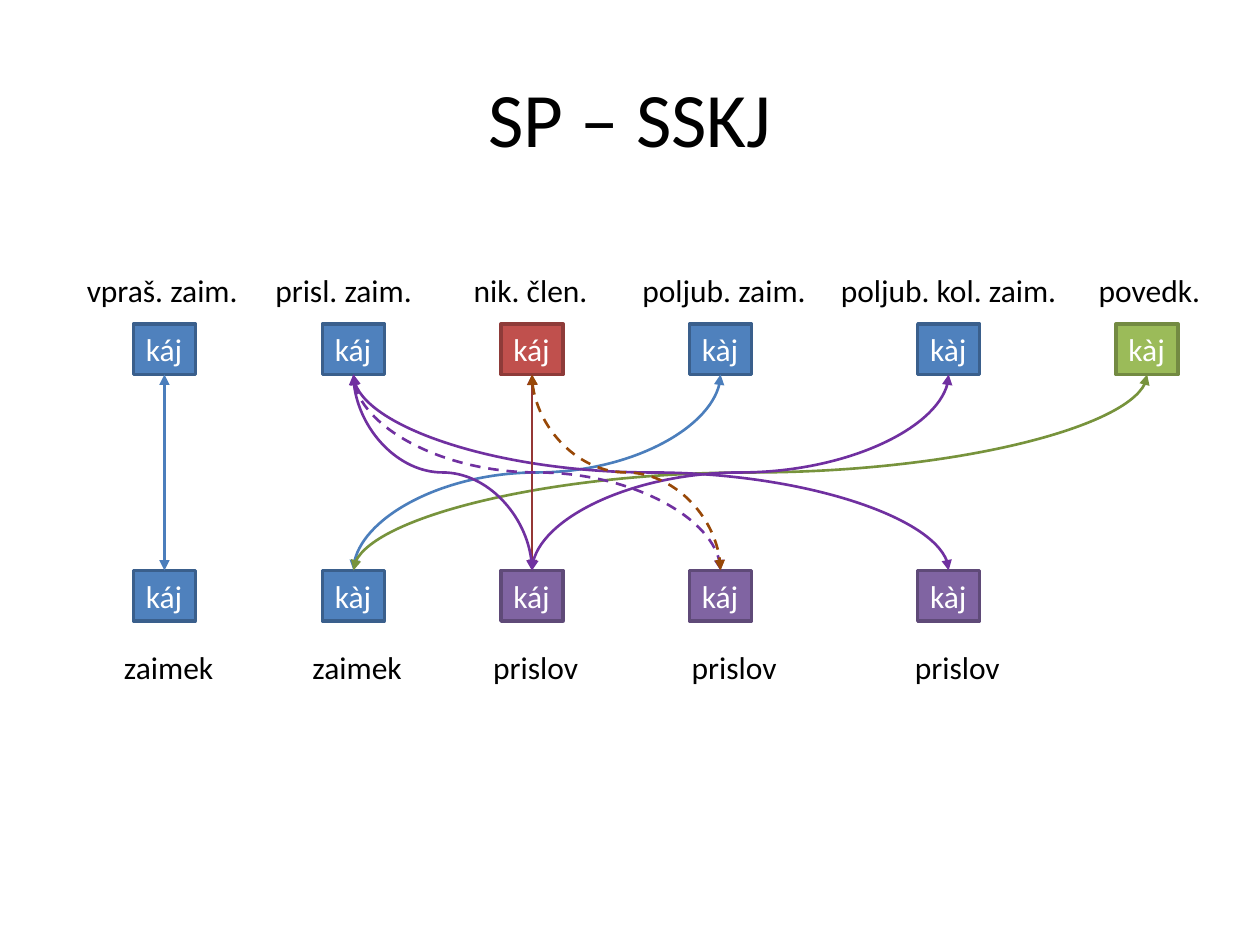
"""Build the SP – SSKJ slide linking the senses of káj and kàj in two dictionaries."""
from dataclasses import dataclass

from lxml import etree
from pptx import Presentation
from pptx.dml.color import RGBColor
from pptx.enum import dml, shapes, text
from pptx.oxml import ns
from pptx.util import Cm, Pt


@dataclass(frozen=True)
class Theme:
    font: str = "Calibri"
    title_size: int = 44
    text_size: int = 18
    black: str = "000000"
    white: str = "FFFFFF"
    blue: tuple = ("4F81BD", "3A5F8C")
    red: tuple = ("C0504D", "8E3B39")
    green: tuple = ("9BBB59", "738A42")
    purple: tuple = ("8064A2", "5F4A78")
    blue_link: str = "4B7EBC"
    green_link: str = "77933C"
    red_link: str = "953735"
    purple_link: str = "7030A0"
    brown_link: str = "984807"


theme = Theme()


def write(shape, wording, size, color, alignment):
    paragraph = shape.text_frame.paragraphs[0]
    paragraph.alignment = alignment
    run = paragraph.add_run()
    run.text = wording
    run.font.name = theme.font
    run.font.size = Pt(size)
    run.font.color.rgb = RGBColor.from_string(color)


presentation = Presentation()
presentation.slide_width, presentation.slide_height = Cm(25.4), Cm(19.05)
slide = presentation.slides.add_slide(presentation.slide_layouts[5])
left_align, center_align = text.PP_ALIGN.LEFT, text.PP_ALIGN.CENTER

title = slide.shapes.title
title.left, title.top, title.width, title.height = Cm(1.27), Cm(0.76), Cm(22.86), Cm(3.18)
title.text_frame.vertical_anchor = text.MSO_ANCHOR.MIDDLE
write(title, "SP – SSKJ", theme.title_size, theme.black, center_align)

columns = [2.69, 6.5, 10.1, 13.9, 18.5, 22.5]
sp_senses = [
    ("káj", theme.blue, "vpraš. zaim.", 1.5, 3.6),
    ("káj", theme.blue, "prisl. zaim.", 5.3, 3.6),
    ("káj", theme.red, "nik. člen.", 9.3, 3),
    ("kàj", theme.blue, "poljub. zaim.", 12.7, 4),
    ("kàj", theme.blue, "poljub. kol. zaim.", 16.7, 5),
    ("kàj", theme.green, "povedk.", 21.9, 2.6),
]
sskj_senses = [
    ("káj", theme.blue, "zaimek", 1.7, 3.4),
    ("kàj", theme.blue, "zaimek", 5.5, 3.4),
    ("káj", theme.purple, "prislov", 9.3, 3),
    ("káj", theme.purple, "prislov", 13.3, 3),
    ("kàj", theme.purple, "prislov", 17.7, 3.2),
]
rows = [
    (sp_senses, 6.53, 5.33, left_align),
    (sskj_senses, 11.5, 12.93, center_align),
]

boxes = []
for senses, box_top, label_top, alignment in rows:
    row_boxes = []
    for column, (word, (fill, outline), label, label_left, label_width) in zip(columns, senses):
        box = slide.shapes.add_shape(
            shapes.MSO_SHAPE.RECTANGLE, Cm(column), Cm(box_top), Cm(1.25), Cm(1.02))
        box.shadow.inherit = False
        box.fill.solid()
        box.fill.fore_color.rgb = RGBColor.from_string(fill)
        box.line.color.rgb = RGBColor.from_string(outline)
        box.line.width = Pt(2)
        box.text_frame.word_wrap = False
        box.text_frame.auto_size = text.MSO_AUTO_SIZE.SHAPE_TO_FIT_TEXT
        write(box, word, theme.text_size, theme.white, left_align)
        row_boxes.append(box)

        caption = slide.shapes.add_textbox(
            Cm(label_left), Cm(label_top), Cm(label_width), Cm(1.02))
        caption.text_frame.word_wrap = True
        caption.text_frame.auto_size = text.MSO_AUTO_SIZE.SHAPE_TO_FIT_TEXT
        write(caption, label, theme.text_size, theme.black, alignment)
    boxes.append(row_boxes)

sp_boxes, sskj_boxes = boxes
links = [
    (3, 1, theme.blue_link, False),
    (5, 1, theme.green_link, False),
    (1, 4, theme.purple_link, False),
    (2, 2, theme.red_link, False),
    (0, 0, theme.blue_link, False),
    (4, 2, theme.purple_link, False),
    (1, 2, theme.purple_link, False),
    (1, 3, theme.purple_link, True),
    (2, 3, theme.brown_link, True),
]
for sp_index, sskj_index, color, dashed in links:
    start, end = sp_boxes[sp_index], sskj_boxes[sskj_index]
    link = slide.shapes.add_connector(shapes.MSO_CONNECTOR.CURVE, 0, 0, 0, 0)
    link.begin_connect(start, 2)
    link.end_connect(end, 0)

    start_x, start_y = start.left + start.width // 2, start.top + start.height
    end_x, end_y = end.left + end.width // 2, end.top
    drop, reach = end_y - start_y, abs(end_x - start_x)
    link.left = (start_x + end_x - drop) // 2
    link.top = (start_y + end_y - reach) // 2
    link.width, link.height = drop, reach
    properties = link._element.spPr
    transform = properties.find(ns.qn("a:xfrm"))
    rightward = end_x > start_x
    transform.set("rot", "16200000" if rightward else "5400000")
    transform.set("flipH", "1" if rightward else "0")
    transform.set("flipV", "0")

    link.line.color.rgb = RGBColor.from_string(color)
    link.line.width = Pt(1.5)
    if dashed:
        link.line.dash_style = dml.MSO_LINE.DASH
    line = properties.find(ns.qn("a:ln"))
    for arrowhead in ("a:headEnd", "a:tailEnd"):
        etree.SubElement(line, ns.qn(arrowhead), type="triangle")
    etree.SubElement(properties, ns.qn("a:effectLst"))

presentation.save("out.pptx")
